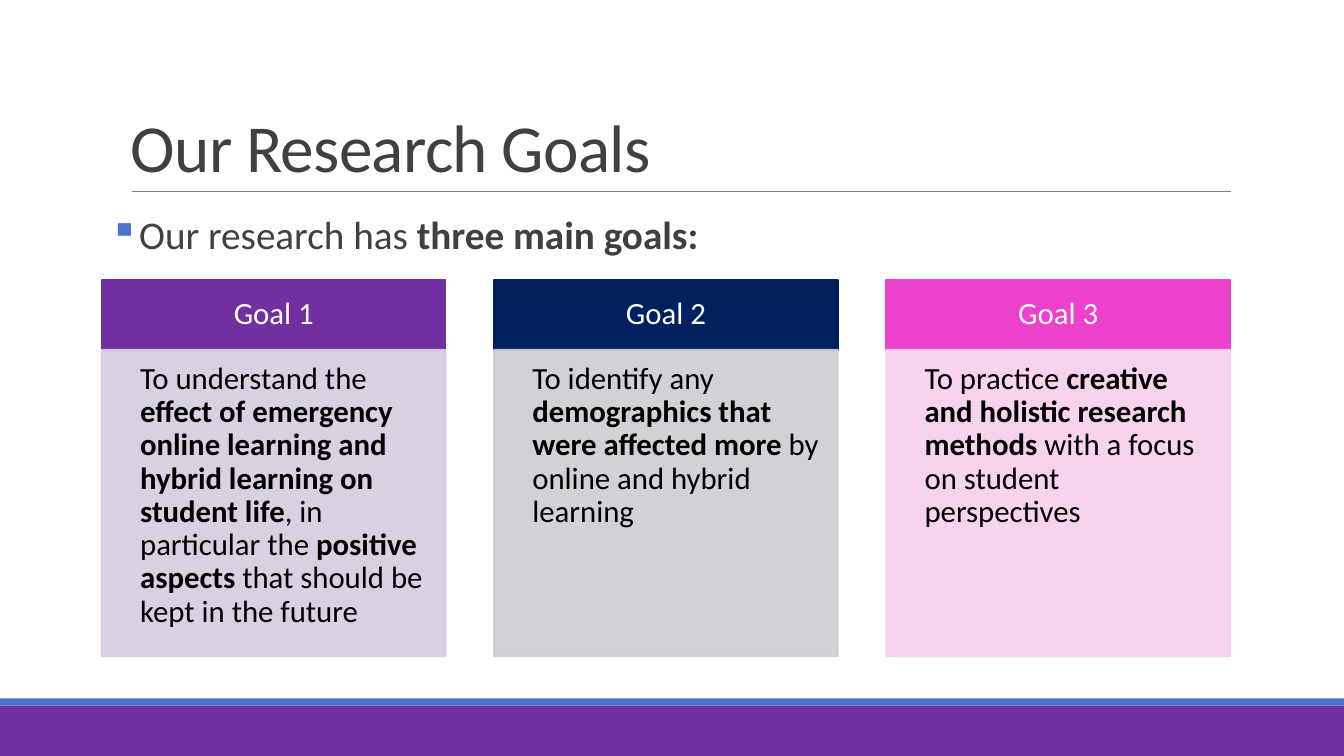
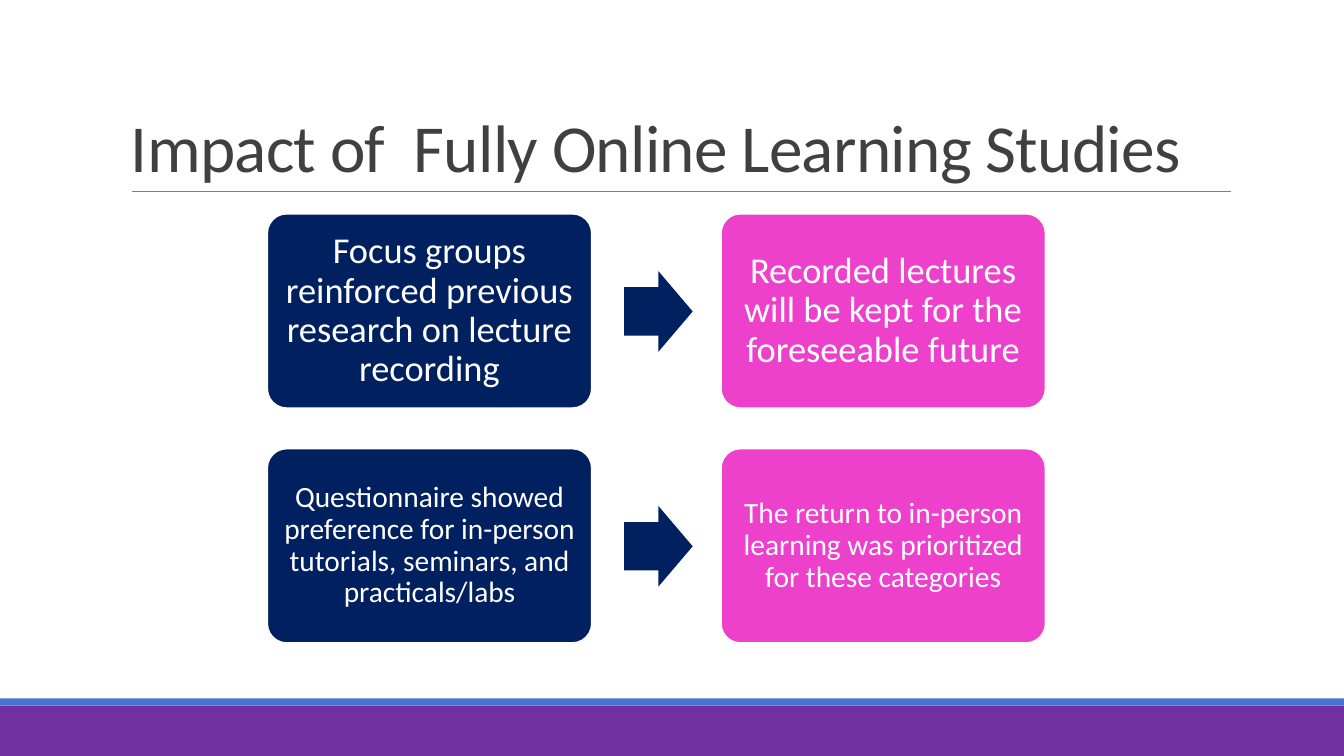
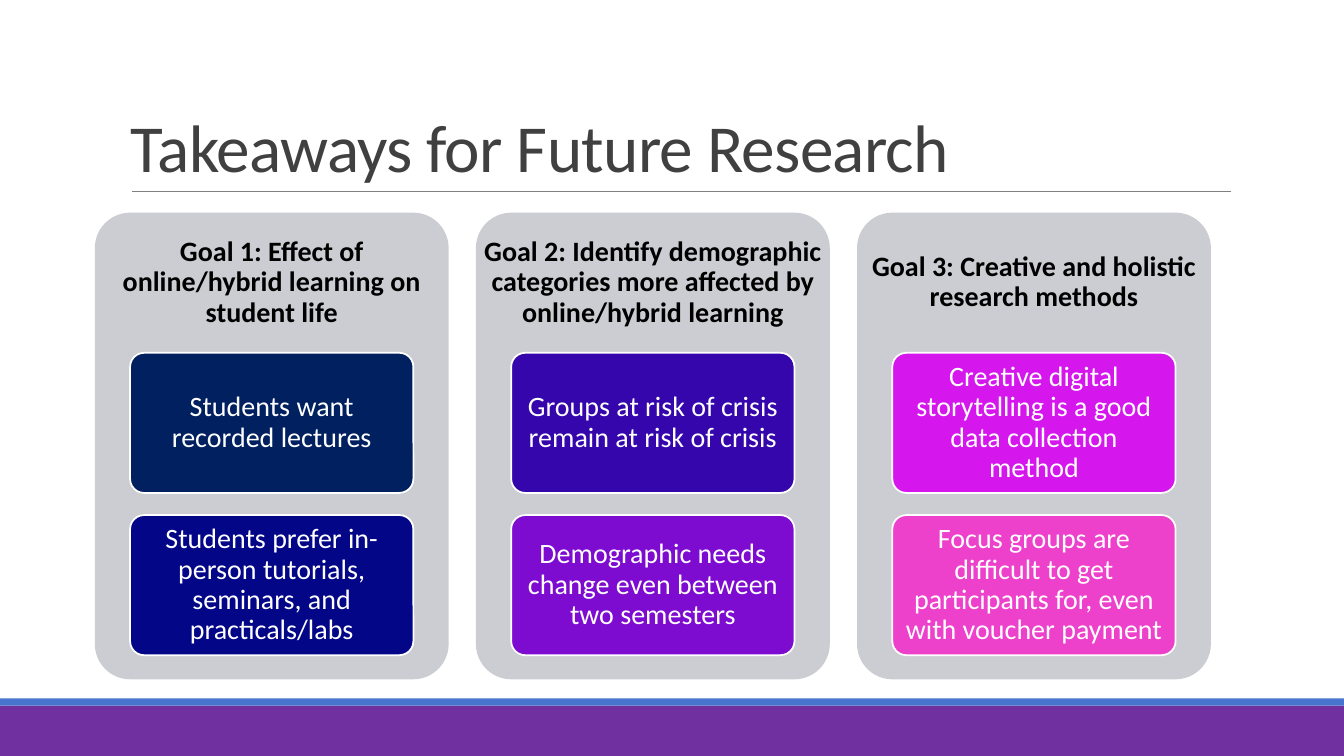
from lxml.etree import SubElement
from pptx import Presentation
from pptx.dml.color import RGBColor
from pptx.enum.shapes import MSO_CONNECTOR as Link, MSO_SHAPE as Shape
from pptx.enum.text import MSO_ANCHOR as Anchor, PP_ALIGN as Align
from pptx.oxml.ns import qn
from pptx.util import Inches, Pt

FONT = "Calibri"
COLORS = {
    "purple": "7030A0", "blue": "4775CD", "navy": "002060", "pink": "ED41CC",
    "white": "FFFFFF", "black": "000000", "text": "404040", "rule": "808080",
    "lilac": "D5CDDF", "gray": "CCCDD2", "rose": "F8CFEC",
    "indigo": "020687", "violet": "3406AC", "grape": "7E0BD0",
    "magenta": "D517EE",
}


def color(name):
    return RGBColor.from_string(COLORS[name])


def box(slide, kind, left, top, width, height, fill, line=None, adjust=()):
    shape = slide.shapes.add_shape(
        kind, Inches(left), Inches(top), Inches(width), Inches(height))
    shape.shadow.inherit = False
    shape.fill.solid()
    shape.fill.fore_color.rgb = color(fill)
    if line:
        shape.line.color.rgb = color(line)
        shape.line.width = Pt(1.25)
    else:
        shape.line.fill.background()
    for i, value in enumerate(adjust):
        shape.adjustments[i] = value
    return shape


def label(slide, left, top, width, height):
    return slide.shapes.add_textbox(
        Inches(left), Inches(top), Inches(width), Inches(height))


def fade(shape, percent):
    """Set the opacity of the fill and line."""
    for node in shape._element.spPr.iter(qn("a:srgbClr")):
        SubElement(node, qn("a:alpha"), val=str(percent * 1000))


def write(shape, runs, size, ink="white", align=Align.CENTER,
          anchor=Anchor.MIDDLE, pad=(0.1, 0.05, 0.1, 0.05), space=0.9):
    """Fill a shape with one paragraph of (text, bold) runs."""
    frame = shape.text_frame
    frame.word_wrap = True
    frame.vertical_anchor = anchor
    (frame.margin_left, frame.margin_top,
     frame.margin_right, frame.margin_bottom) = map(Inches, pad)
    para = frame.paragraphs[0]
    para.alignment = align
    para.line_spacing = space
    for text, bold in runs:
        run = para.add_run()
        run.text = text
        font = run.font
        font.name, font.size, font.bold = FONT, Pt(size), bold
        font.color.rgb = color(ink)
    return para


def bullet(para, mark, ink, indent):
    props = para._p.get_or_add_pPr()
    props.set("marL", str(Inches(indent)))
    props.set("indent", str(-Inches(indent)))
    tint = SubElement(props, qn("a:buClr"))
    SubElement(tint, qn("a:srgbClr"), val=COLORS[ink])
    SubElement(props, qn("a:buChar"), char=mark)


def page(deck, title):
    """Add a slide with the shared bands, rule and title."""
    slide = deck.slides.add_slide(deck.slide_layouts[6])
    box(slide, Shape.RECTANGLE, 0, 7, 13.33, 0.5, "purple")
    box(slide, Shape.RECTANGLE, 0, 6.93, 13.33, 0.07, "blue")
    rule = slide.shapes.add_connector(
        Link.STRAIGHT, Inches(1.31), Inches(1.9), Inches(12.21), Inches(1.9))
    rule.line.color.rgb = color("rule")
    rule.line.width = Pt(0.5)
    SubElement(rule._element.spPr, qn("a:effectLst"))
    para = write(label(slide, 1.2, 0.31, 11, 1.59), [(title, False)], 48,
                 "text", Align.LEFT, Anchor.BOTTOM, space=0.85)
    para.runs[0].font._element.set("spc", "-50")
    return slide


def card(slide, left, head, runs, dark, light):
    top = box(slide, Shape.RECTANGLE, left, 2.78, 3.41, 0.69, dark, dark)
    write(top, [(head, False)], 22, pad=(0.17, 0.1, 0.17, 0.1))
    body = box(slide, Shape.RECTANGLE, left, 3.47, 3.41, 3.04, light, light)
    fade(body, 90)
    write(body, runs, 22, "black", Align.LEFT, Anchor.TOP,
          (0.38, 0.13, 0.17, 0.19))


def tile(slide, left, top, width, height, text, size, fill, pad):
    shape = box(slide, Shape.ROUNDED_RECTANGLE, left, top, width, height,
                fill, "white", [0.1])
    write(shape, [(text, False)], size, pad=pad)


def step(slide, top, cause, effect, size, inset):
    """Add a row of two tiles joined by an arrow."""
    for left, text, fill in ((2.65, cause, "navy"), (7.15, effect, "pink")):
        tile(slide, left, top, 3.22, 1.93, text, size, fill, [inset] * 4)
    box(slide, Shape.RIGHT_ARROW, 6.19, top + 0.57, 0.68, 0.8, "navy",
        adjust=[0.6, 0.5])


def panel(slide, left, head, items):
    """Add a gray column with a heading and stacked tiles."""
    box(slide, Shape.ROUNDED_RECTANGLE, left, 2.11, 3.51, 4.63, "gray",
        adjust=[0.1])
    write(label(slide, left, 2.11, 3.51, 1.39), [(head, True)], 20, "black",
          pad=[0.08] * 4)
    for i, (text, fill) in enumerate(items):
        tile(slide, left + 0.35, 3.5 + 1.61 * i, 2.81, 1.39, text, 20, fill,
             (0.06, 0.04, 0.06, 0.04))


def goals(deck):
    slide = page(deck, "Our Research Goals")
    para = write(label(slide, 1.09, 2.09, 11, 0.69),
                 [("Our research has ", False), ("three main goals:", True)],
                 28, "text", Align.LEFT, Anchor.TOP, (0, 0.05, 0, 0.05))
    bullet(para, "▪", "blue", 0.23)
    cards = [
        ([("To understand the ", False),
          ("effect of emergency online learning and hybrid learning on "
           "student life", True),
          (", in particular the ", False), ("positive aspects", True),
          (" that should be kept in the future", False)], "purple", "lilac"),
        ([("To identify any ", False),
          ("demographics that were affected more ", True),
          ("by online and hybrid learning", False)], "navy", "gray"),
        ([("To practice ", False),
          ("creative and holistic research methods ", True),
          ("with a focus on student perspectives", False)], "pink", "rose"),
    ]
    for i, (runs, dark, light) in enumerate(cards):
        card(slide, 1.01 + 3.89 * i, f"Goal {i + 1}", runs, dark, light)


def impact(deck):
    slide = page(deck, "Impact of  Fully Online Learning Studies")
    step(slide, 2.12,
         "Focus groups reinforced previous research on lecture recording",
         "Recorded lectures will be kept for the foreseeable future",
         26, 0.11)
    step(slide, 4.45,
         "Questionnaire showed preference for in-person tutorials, "
         "seminars, and practicals/labs",
         "The return to in-person learning was prioritized for these "
         "categories", 21, 0.09)


def lessons(deck):
    slide = page(deck, "Takeaways for Future Research")
    panels = [
        ("Effect of online/hybrid learning on student life",
         [("Students want recorded lectures", "navy"),
          ("Students prefer in-person tutorials, seminars, and "
           "practicals/labs", "indigo")]),
        ("Identify demographic categories more affected by online/hybrid "
         "learning",
         [("Groups at risk of crisis remain at risk of crisis", "violet"),
          ("Demographic needs change even between two semesters", "grape")]),
        ("Creative and holistic research methods",
         [("Creative digital storytelling is a good data collection method",
           "magenta"),
          ("Focus groups are difficult to get participants for, even with "
           "voucher payment", "pink")]),
    ]
    for i, (head, items) in enumerate(panels):
        panel(slide, 0.94 + 3.78 * i, f"Goal {i + 1}: {head}", items)


def main():
    deck = Presentation()
    deck.slide_width, deck.slide_height = Inches(13.33), Inches(7.5)
    goals(deck)
    impact(deck)
    lessons(deck)
    deck.save("out.pptx")


if __name__ == "__main__":
    main()
